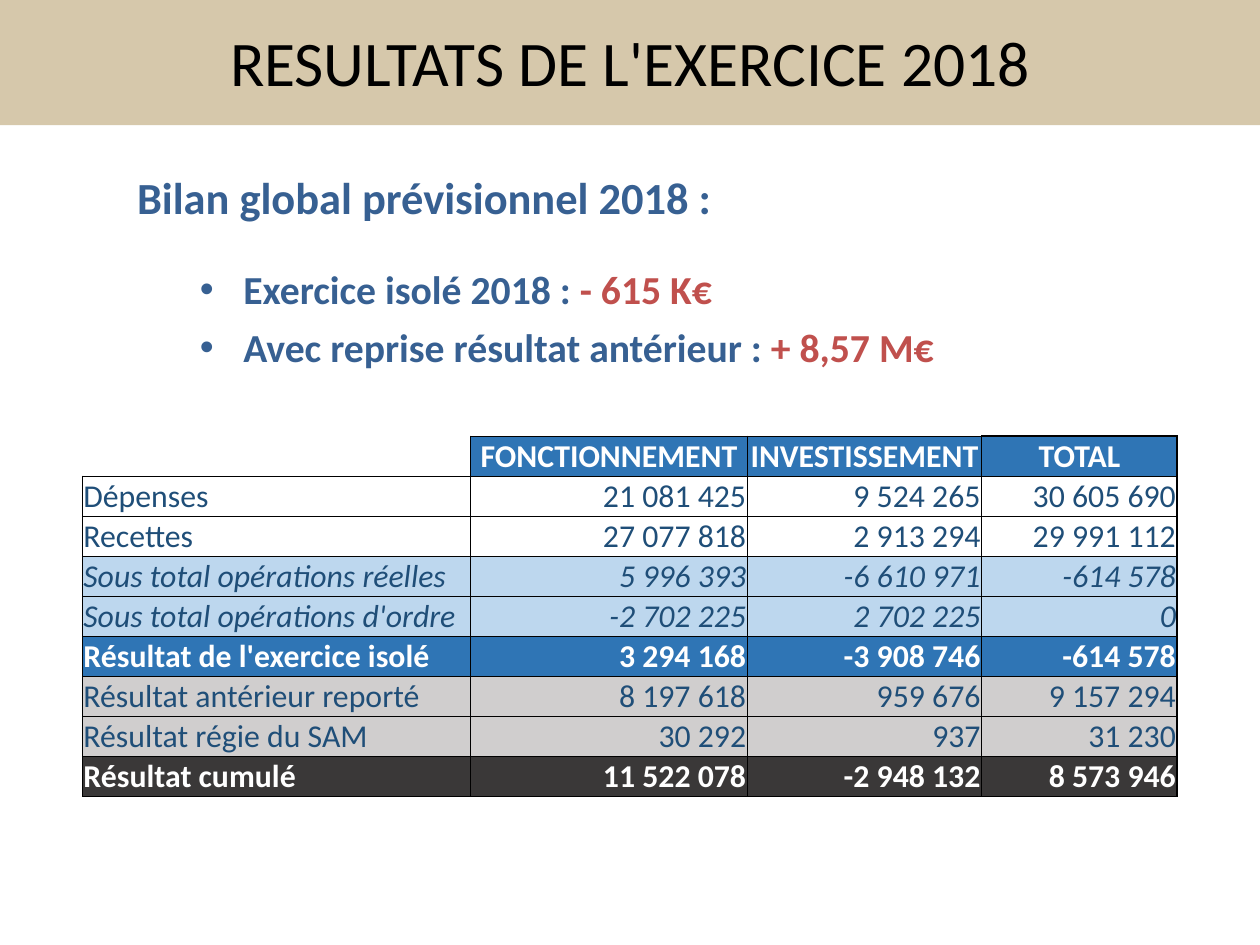
from dataclasses import dataclass

from lxml import etree
from pptx import Presentation, util as u
from pptx.dml.color import RGBColor
from pptx.enum import shapes, text
from pptx.oxml import ns

WIDTH, HEIGHT = u.Cm(28), u.Cm(21)


@dataclass(frozen=True)
class Theme:
    font: str = "Calibri"
    black: str = "000000"
    white: str = "FFFFFF"
    band: str = "D6C8AB"
    heading: str = "376092"
    accent: str = "C0504D"
    figures: str = "1F4E78"
    strong: str = "2F75B5"
    subtotal: str = "BDD7EE"
    carried: str = "D0CECE"
    cumulative: str = "3A3838"
    title_size: int = 40
    heading_size: int = 28
    bullet_size: int = 25
    table_size: int = 20


THEME = Theme()


@dataclass(frozen=True)
class RowStyle:
    fill: str = ""
    color: str = THEME.figures
    bold: bool = False
    italic: bool = False


HEADER = RowStyle(THEME.strong, THEME.white, bold=True)
PLAIN = RowStyle()
SUBTOTAL = RowStyle(THEME.subtotal, italic=True)
CARRIED = RowStyle(THEME.carried)
CUMULATIVE = RowStyle(THEME.cumulative, THEME.white, bold=True)

COLUMN_PERCENTS = (30.84, 21.95, 18.6, 15.51)
ROW_PERCENT = 4.24
RESULTS = [
    (HEADER, "", "FONCTIONNEMENT", "INVESTISSEMENT", "TOTAL"),
    (PLAIN, "Dépenses", "21 081 425", "9 524 265", "30 605 690"),
    (PLAIN, "Recettes", "27 077 818", "2 913 294", "29 991 112"),
    (SUBTOTAL, "Sous total opérations réelles", "5 996 393", "-6 610 971", "-614 578"),
    (SUBTOTAL, "Sous total opérations d'ordre", "-2 702 225", "2 702 225", "0"),
    (HEADER, "Résultat de l'exercice isolé", "3 294 168", "-3 908 746", "-614 578"),
    (CARRIED, "Résultat antérieur reporté", "8 197 618", "959 676", "9 157 294"),
    (CARRIED, "Résultat régie du SAM", "30 292", "937", "31 230"),
    (CUMULATIVE, "Résultat cumulé", "11 522 078", "-2 948 132", "8 573 946"),
]
BALANCES = [
    ("Exercice isolé 2018 : ", "- 615 K€", 26),
    ("Avec reprise résultat antérieur : ", "+ 8,57 M€", 6.6),
]


def across(percent):
    return int(WIDTH * percent / 100)


def down(percent):
    return int(HEIGHT * percent / 100)


def place(left, top, width, height):
    return across(left), down(top), across(width), down(height)


def set_font(font, size, color, bold=False, italic=False):
    font.name, font.size = THEME.font, u.Pt(size)
    font.bold, font.italic = bold, italic
    font.color.rgb = RGBColor.from_string(color)


def add_title_band(slide, title):
    shape = slide.shapes.add_shape(
        shapes.MSO_SHAPE.RECTANGLE, *place(0, 0, 100, 13.25))
    shape.shadow.inherit = False
    shape.fill.solid()
    shape.fill.fore_color.rgb = RGBColor.from_string(THEME.band)
    shape.line.fill.background()
    box = slide.shapes.add_textbox(*place(5, 0, 90, 13))
    frame = box.text_frame
    frame.word_wrap = True
    frame.vertical_anchor = text.MSO_ANCHOR.MIDDLE
    paragraph = frame.paragraphs[0]
    paragraph.text = title
    paragraph.alignment = text.PP_ALIGN.CENTER
    set_font(paragraph.font, THEME.title_size, THEME.black)


def indent(paragraph, left, hanging=0, bullet=""):
    properties = paragraph._p.get_or_add_pPr()
    properties.set("marL", str(u.Inches(left)))
    properties.set("indent", str(-u.Inches(hanging)))
    if bullet:
        etree.SubElement(properties, ns.qn("a:buFont"), typeface="Arial")
        etree.SubElement(properties, ns.qn("a:buChar"), char=bullet)


def add_balance(slide, heading, balances):
    box = slide.shapes.add_textbox(*place(5, 17.45, 90, 28.75))
    frame = box.text_frame
    frame.word_wrap = True
    paragraph = frame.paragraphs[0]
    paragraph.text = heading
    indent(paragraph, 0.55)
    set_font(paragraph.font, THEME.heading_size, THEME.heading, bold=True)
    for label, amount, space in balances:
        paragraph = frame.add_paragraph()
        indent(paragraph, 1.48, 0.38, "•")
        paragraph.space_before = u.Pt(space)
        for wording, color in ((label, THEME.heading), (amount, THEME.accent)):
            run = paragraph.add_run()
            run.text = wording
            set_font(run.font, THEME.bullet_size, color, bold=True)


def add_borders(cell, widths):
    properties = cell._tc.get_or_add_tcPr()
    for side, width in widths.items():
        line = etree.SubElement(
            properties, ns.qn("a:ln" + side), w=str(u.Pt(width)))
        fill = etree.SubElement(line, ns.qn("a:solidFill"))
        etree.SubElement(fill, ns.qn("a:srgbClr"), val=THEME.black)


def border_widths(row, column):
    if row == column == 0:
        return {"R": 0.5, "B": 0.5}
    last = len(COLUMN_PERCENTS) - 1
    total = column == last
    return {
        "L": 1 if total else 0.5,
        "R": 1 if column >= last - 1 else 0.5,
        "T": 1 if total and row == 0 else 0.5,
        "B": 1 if total and row == len(RESULTS) - 1 else 0.5,
    }


def fill_cell(cell, wording, style, alignment, widths):
    cell.margin_left = cell.margin_right = cell.margin_top = u.Inches(0.01)
    cell.margin_bottom = 0
    cell.vertical_anchor = text.MSO_ANCHOR.BOTTOM
    add_borders(cell, widths)
    if style.fill and wording:
        cell.fill.solid()
        cell.fill.fore_color.rgb = RGBColor.from_string(style.fill)
    else:
        cell.fill.background()
    paragraph = cell.text_frame.paragraphs[0]
    paragraph.text = wording
    paragraph.alignment = alignment
    set_font(paragraph.font, THEME.table_size, style.color,
             style.bold, style.italic)


def add_results(slide, results):
    frame = slide.shapes.add_table(
        len(results), len(COLUMN_PERCENTS),
        *place(6.53, 46.14, sum(COLUMN_PERCENTS), ROW_PERCENT * len(results)))
    table = frame.table
    table.first_row = table.horz_banding = False
    for column, percent in zip(table.columns, COLUMN_PERCENTS):
        column.width = across(percent)
    for row, (style, *wordings) in enumerate(results):
        for column, wording in enumerate(wordings):
            if row == 0:
                alignment = text.PP_ALIGN.CENTER
            else:
                alignment = text.PP_ALIGN.RIGHT if column else text.PP_ALIGN.LEFT
            fill_cell(table.cell(row, column), wording, style, alignment,
                      border_widths(row, column))


def main():
    presentation = Presentation()
    presentation.slide_width, presentation.slide_height = WIDTH, HEIGHT
    slide = presentation.slides.add_slide(presentation.slide_layouts[6])
    add_title_band(slide, "RESULTATS DE L'EXERCICE 2018")
    add_balance(slide, "Bilan global prévisionnel 2018 :", BALANCES)
    add_results(slide, RESULTS)
    presentation.save("out.pptx")


if __name__ == "__main__":
    main()
